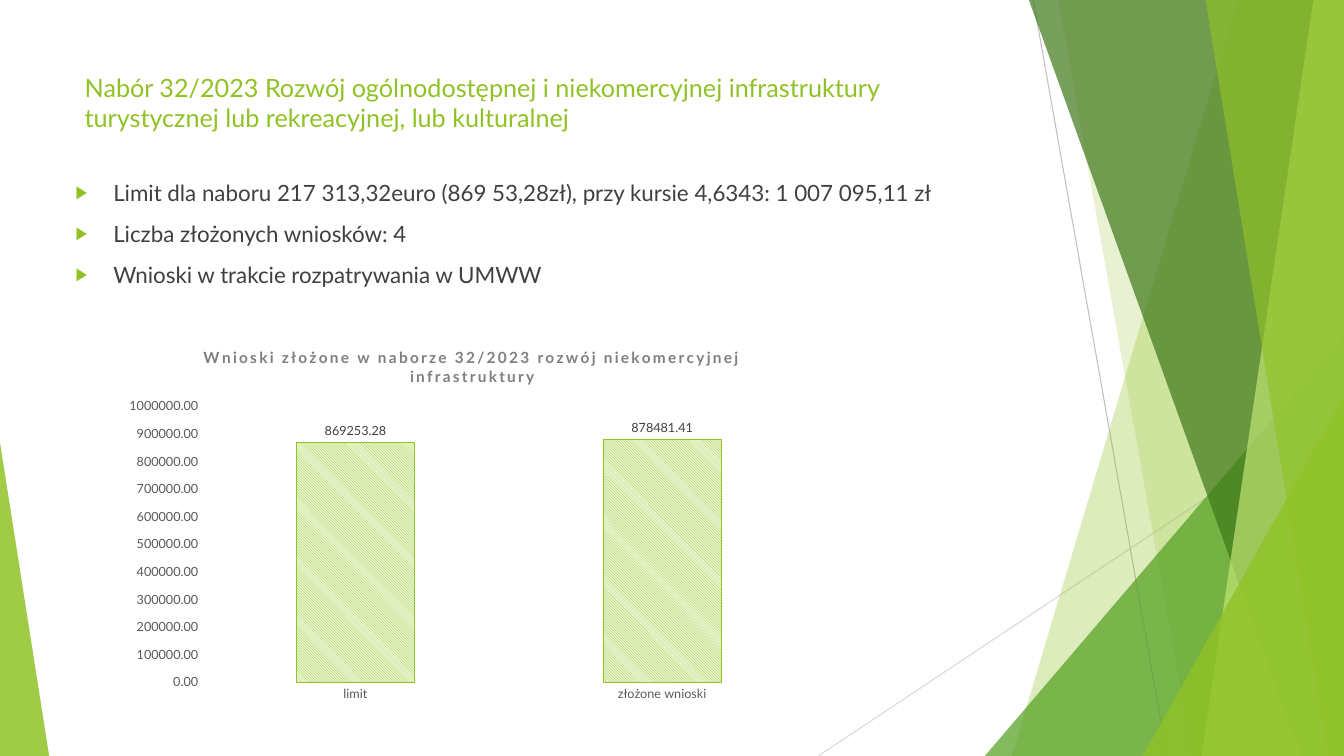
from dataclasses import dataclass

from lxml import etree
from pptx import Presentation
from pptx.chart.data import CategoryChartData
from pptx.dml.color import RGBColor
from pptx.enum.chart import XL_CHART_TYPE, XL_LABEL_POSITION, XL_TICK_MARK
from pptx.enum.dml import MSO_PATTERN
from pptx.enum.shapes import MSO_CONNECTOR, MSO_SHAPE
from pptx.enum.text import MSO_ANCHOR, MSO_AUTO_SIZE, PP_ALIGN
from pptx.oxml.ns import qn
from pptx.util import Cm, Pt

COLUMNS = XL_CHART_TYPE.COLUMN_CLUSTERED
OUTSIDE_END = XL_LABEL_POSITION.OUTSIDE_END
NO_TICK = XL_TICK_MARK.NONE
DIAGONAL = MSO_PATTERN.LIGHT_DOWNWARD_DIAGONAL
STRAIGHT = MSO_CONNECTOR.STRAIGHT
TRIANGLE = MSO_SHAPE.ISOSCELES_TRIANGLE
TOP = MSO_ANCHOR.TOP
MIDDLE = MSO_ANCHOR.MIDDLE
NO_AUTOFIT = MSO_AUTO_SIZE.NONE
LEFT = PP_ALIGN.LEFT


@dataclass(frozen=True)
class Theme:
    font: str = "Lato"
    green: str = "90C226"
    leaf: str = "54A021"
    forest: str = "3F7819"
    lime: str = "C0E474"
    pale: str = "EAF6D1"
    text: str = "404040"
    axis: str = "595959"
    caption: str = "7F7F7F"
    dark_ray: str = "BFBFBF"
    light_ray: str = "D9D9D9"
    heading_size: float = 18
    body_size: float = 16
    caption_size: float = 11
    label_size: float = 9


THEME = Theme()


def style(font, size, colour, bold=False):
    font.name = THEME.font
    font.size = Pt(size)
    font.bold = bold
    font.color.rgb = RGBColor.from_string(colour)


def paint(facet, colour, opacity):
    facet.shadow.inherit = False
    facet.line.fill.background()
    facet.fill.solid()
    facet.fill.fore_color.rgb = RGBColor.from_string(colour)
    srgb = facet._element.spPr.find(qn("a:solidFill")).find(qn("a:srgbClr"))
    etree.SubElement(srgb, qn("a:alpha"), val=str(opacity * 1000))


WIDTH, HEIGHT = 33.87, 19.05
prs = Presentation()
prs.slide_width, prs.slide_height = Cm(WIDTH), Cm(HEIGHT)
slide = prs.slides.add_slide(prs.slide_layouts[1])
shapes = slide.shapes
heading, points = shapes.title, slide.placeholders[1]

rays = [
    (26.04, 0, 29.41, HEIGHT, THEME.dark_ray),
    (WIDTH, 10.24, 20.62, HEIGHT, THEME.light_ray),
]
for x1, y1, x2, y2, colour in rays:
    ray = shapes.add_connector(STRAIGHT, Cm(x1), Cm(y1), Cm(x2), Cm(y2))
    ray.line.color.rgb = RGBColor.from_string(colour)
    ray.line.width = Pt(0.75)
    etree.SubElement(ray._element.spPr, qn("a:effectLst"))

facets = [
    ("band", (31.19, 25.5), THEME.green, 30),
    ("band", (26.67, 30.05), THEME.green, 20),
    ("triangle", (24.82, 9.05, 10.59, 1), THEME.leaf, 72),
    ("band", (25.93, 32.79), THEME.forest, 70),
    ("band", (33.1, 30.28), THEME.lime, 70),
    ("band", (30.38, 33.48), THEME.green, 65),
    ("triangle", (28.8, 5.07, 9.07, 1), THEME.green, 80),
    ("triangle", (0, 1.24, 7.9, 0), THEME.green, 85),
]
for outline, geometry, colour, opacity in facets:
    if outline == "band":
        top_x, bottom_x = geometry
        builder = shapes.build_freeform(Cm(top_x), 0)
        corners = [(WIDTH, 0), (WIDTH, HEIGHT), (bottom_x, HEIGHT)]
        builder.add_line_segments([(Cm(x), Cm(y)) for x, y in corners])
        facet = builder.convert_to_shape()
    else:
        left, width, height, apex = geometry
        facet = shapes.add_shape(
            TRIANGLE, Cm(left), Cm(HEIGHT - height), Cm(width), Cm(height))
        facet.adjustments[0] = apex
    paint(facet, colour, opacity)

placements = [
    (heading, (1.88, 1.7, 23.98, 1.78), MIDDLE),
    (points, (1.65, 4.39, 24.74, 13.49), TOP),
]
for holder, box, anchor in placements:
    holder.left, holder.top, holder.width, holder.height = map(Cm, box)
    holder.text_frame.word_wrap = True
    holder.text_frame.auto_size = NO_AUTOFIT
    holder.text_frame.vertical_anchor = anchor
    shapes._spTree.append(holder._element)

heading_line = heading.text_frame.paragraphs[0]
heading_line.alignment = LEFT
heading_run = heading_line.add_run()
heading_run.text = (
    "Nabór 32/2023 Rozwój ogólnodostępnej i niekomercyjnej infrastruktury "
    "turystycznej lub rekreacyjnej, lub kulturalnej")
style(heading_run.font, THEME.heading_size, THEME.green)

facts = [
    "Limit dla naboru 217 313,32euro (869 53,28zł), przy kursie 4,6343: 1 007 095,11 zł",
    "Liczba złożonych wniosków: 4",
    "Wnioski w trakcie rozpatrywania w UMWW",
]
for index, fact in enumerate(facts):
    frame = points.text_frame
    item = frame.add_paragraph() if index else frame.paragraphs[0]
    item.space_before = Pt(10)
    item_run = item.add_run()
    item_run.text = fact
    style(item_run.font, THEME.body_size, THEME.text)
    props = item._p.get_or_add_pPr()
    props.set("marL", str(Cm(0.95)))
    props.set("indent", str(-Cm(0.95)))
    bullet_colour = etree.SubElement(props, qn("a:buClr"))
    etree.SubElement(bullet_colour, qn("a:srgbClr"), val=THEME.green)
    etree.SubElement(props, qn("a:buSzPct"), val="80000")
    etree.SubElement(props, qn("a:buChar"), char="▶")

amounts = CategoryChartData(number_format="0.00")
amounts.categories = ["limit", "złożone wnioski"]
amounts.add_series("Series 1", [869253.28, 878481.41])
chart = shapes.add_chart(
    COLUMNS, Cm(2.9), Cm(8.33), Cm(18.01), Cm(9.55), amounts).chart
style(chart.font, THEME.label_size, THEME.axis)
chart.has_legend = False
chart.has_title = True
caption = chart.chart_title.text_frame.paragraphs[0].add_run()
caption.text = "Wnioski złożone w naborze 32/2023 rozwój niekomercyjnej infrastruktury"
style(caption.font, THEME.caption_size, THEME.caption, bold=True)
caption.font._element.set("spc", "150")

for axis in (chart.category_axis, chart.value_axis):
    axis.has_major_gridlines = False
    axis.major_tick_mark = axis.minor_tick_mark = NO_TICK
    axis.format.line.fill.background()
    style(axis.tick_labels.font, THEME.label_size, THEME.axis)
scale = chart.value_axis
scale.minimum_scale, scale.maximum_scale, scale.major_unit = 0, 1000000, 100000
scale.tick_labels.number_format = "0.00"
scale.tick_labels.number_format_is_linked = False

plot = chart.plots[0]
plot.gap_width = 160
plot.vary_by_categories = False
bars = plot.series[0].format
bars.fill.patterned()
bars.fill.pattern = DIAGONAL
bars.fill.fore_color.rgb = RGBColor.from_string(THEME.green)
bars.fill.back_color.rgb = RGBColor.from_string(THEME.pale)
bars.line.color.rgb = RGBColor.from_string(THEME.green)
bars.line.width = Pt(0.75)
plot.has_data_labels = True
labels = plot.data_labels
labels.show_value = True
labels.position = OUTSIDE_END
labels.number_format = "0.00"
labels.number_format_is_linked = False
style(labels.font, THEME.label_size, THEME.text)

prs.save("out.pptx")
